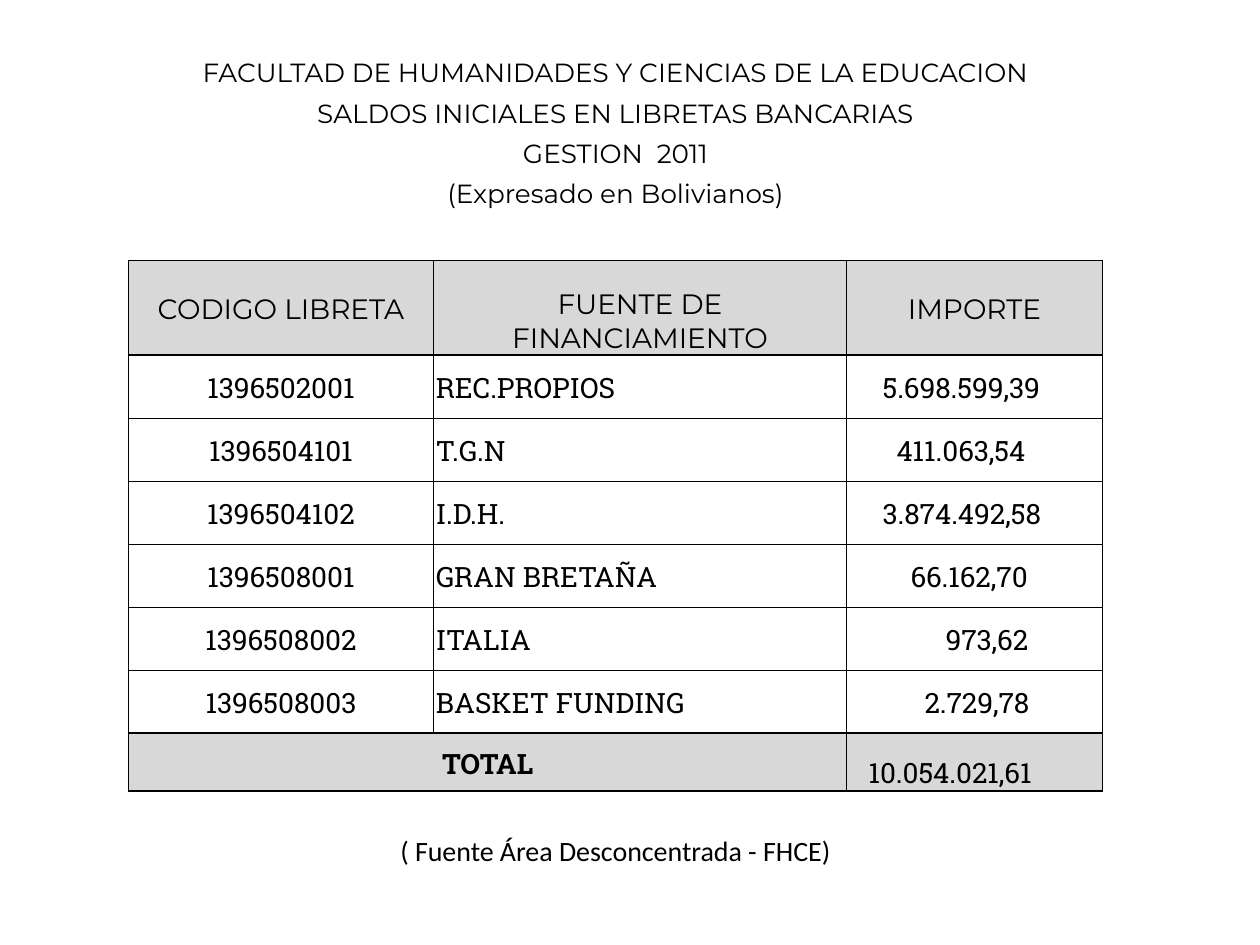
from lxml import etree
from pptx import Presentation, util as u
from pptx.dml.color import RGBColor
from pptx.enum import text
from pptx.oxml import ns

BLACK = RGBColor(0, 0, 0)
GRAY = RGBColor(0xD8, 0xD8, 0xD8)
HEADING_FONT, BODY_FONT, SOURCE_FONT = "Montserrat", "Roboto Slab", "Calibri"
CENTER, LEFT = text.PP_ALIGN.CENTER, text.PP_ALIGN.LEFT
MIDDLE, BOTTOM = text.MSO_ANCHOR.MIDDLE, text.MSO_ANCHOR.BOTTOM
NO_STYLE = "{2D5ABB26-0587-4C30-8999-92F81FD0307C}"
INSET = 1.44

COLUMN_WIDTHS = [174.24, 236.16, 146.16]
ROW_HEIGHTS = [23.04] * 4 + [28.8, 54] + [36] * 6 + [33.12, 22.32, 22.32]
HEADER_ROW, FIRST_ROW, TOTAL_ROW, SOURCE_ROW = 5, 6, 12, 14

TITLES = [
    "FACULTAD DE HUMANIDADES Y CIENCIAS DE LA EDUCACION",
    "SALDOS INICIALES EN LIBRETAS BANCARIAS",
    "GESTION  2011",
    "(Expresado en Bolivianos)",
]
HEADERS = [("CODIGO LIBRETA", MIDDLE), ("FUENTE DE FINANCIAMIENTO", BOTTOM), ("IMPORTE", MIDDLE)]
ACCOUNTS = [
    ("1396502001", "REC.PROPIOS", "5.698.599,39", 20.5),
    ("1396504101", "T.G.N", "411.063,54", 28.5),
    ("1396504102", "I.D.H.", "3.874.492,58", 20.5),
    ("1396508001", "GRAN BRETAÑA", "66.162,70", 36.5),
    ("1396508002", "ITALIA", "973,62", 56.5),
    ("1396508003", "BASKET FUNDING", "2.729,78", 44.5),
]


def line_width(row):
    if row < HEADER_ROW or row > TOTAL_ROW + 1:
        return 0
    return 0.5 if FIRST_ROW < row < TOTAL_ROW else 1


def set_border(cell, side, width):
    line = etree.SubElement(cell._tc.get_or_add_tcPr(), ns.qn("a:ln" + side))
    line.set("w", str(u.Pt(width)))
    if width:
        fill = etree.SubElement(line, ns.qn("a:solidFill"))
        etree.SubElement(fill, ns.qn("a:srgbClr")).set("val", str(BLACK))
    else:
        etree.SubElement(line, ns.qn("a:noFill"))


def format_cell(cell, row):
    side_width = 1 if HEADER_ROW <= row <= TOTAL_ROW else 0
    widths = {"L": side_width, "R": side_width, "T": line_width(row), "B": line_width(row + 1)}
    for side, width in widths.items():
        set_border(cell, side, width)
    if row in (HEADER_ROW, TOTAL_ROW):
        cell.fill.solid()
        cell.fill.fore_color.rgb = GRAY
    else:
        cell.fill.background()
    cell.margin_left = cell.margin_right = u.Pt(INSET)
    cell.margin_top = cell.margin_bottom = 0


def write(cell, words, font=BODY_FONT, size=16, align=CENTER, anchor=MIDDLE, bold=False, left=INSET):
    cell.vertical_anchor = anchor
    cell.margin_left = u.Pt(left)
    cell.margin_top = u.Pt(INSET)
    para = cell.text_frame.paragraphs[0]
    para.alignment = align
    span = para.add_run()
    span.text = words
    span.font.name = font
    span.font.size = u.Pt(size)
    span.font.bold = bold
    span.font.color.rgb = BLACK


def add_grid(page):
    frame = page.shapes.add_table(
        len(ROW_HEIGHTS), len(COLUMN_WIDTHS), u.Pt(73.44), u.Pt(28.08),
        u.Pt(sum(COLUMN_WIDTHS)), u.Pt(sum(ROW_HEIGHTS)))
    table = frame.table
    table.first_row = table.horz_banding = False
    table._tbl.tblPr.find(ns.qn("a:tableStyleId")).text = NO_STYLE
    for column, width in zip(table.columns, COLUMN_WIDTHS):
        column.width = u.Pt(width)
    for row, height in enumerate(ROW_HEIGHTS):
        table.rows[row].height = u.Pt(height)
        for cell in table.rows[row].cells:
            format_cell(cell, row)
    return table


def write_across(table, row, last_column, words, **style):
    cell = table.cell(row, 0)
    cell.merge(table.cell(row, last_column))
    write(cell, words, **style)


def fill_table(table):
    for row, title in enumerate(TITLES):
        write_across(table, row, 2, title, font=HEADING_FONT, size=15, anchor=BOTTOM)
    for column, (header, anchor) in enumerate(HEADERS):
        write(table.cell(HEADER_ROW, column), header, font=HEADING_FONT, anchor=anchor)
    for row, (code, source, amount, indent) in enumerate(ACCOUNTS, FIRST_ROW):
        write(table.cell(row, 0), code)
        write(table.cell(row, 1), source, align=LEFT)
        write(table.cell(row, 2), amount, align=LEFT, left=indent)
    write_across(table, TOTAL_ROW, 1, "TOTAL", bold=True)
    write(table.cell(TOTAL_ROW, 2), "10.054.021,61", align=LEFT, anchor=BOTTOM, left=12.5)
    write_across(table, SOURCE_ROW, 2, "( Fuente Área Desconcentrada - FHCE)",
                 font=SOURCE_FONT, anchor=BOTTOM)


def main():
    deck = Presentation()
    deck.slide_width, deck.slide_height = u.Pt(720), u.Pt(540)
    page = deck.slides.add_slide(deck.slide_layouts[6])
    fill_table(add_grid(page))
    deck.save("out.pptx")


if __name__ == "__main__":
    main()
